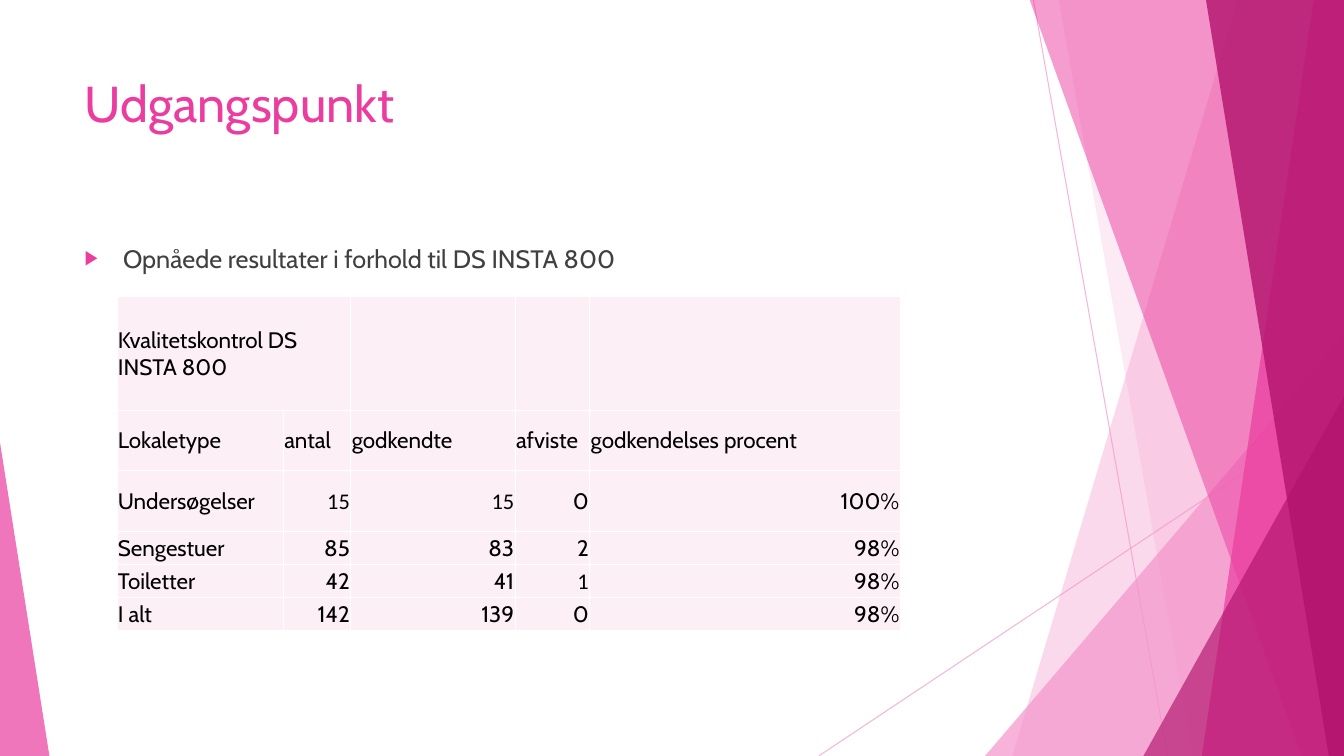
from lxml.etree import SubElement
from pptx import Presentation
from pptx.dml.color import RGBColor
from pptx.enum.shapes import MSO_CONNECTOR, MSO_SHAPE
from pptx.enum.text import MSO_ANCHOR, MSO_AUTO_SIZE, PP_ALIGN
from pptx.oxml import parse_xml
from pptx.oxml.ns import nsdecls, qn
from pptx.util import Inches, Pt

PINK = RGBColor(0xEB, 0x3D, 0x9F)
LIGHT_PINK = RGBColor(0xF4, 0x96, 0xCB)
DARK_PINK = RGBColor(0xB2, 0x13, 0x6D)
CELL_PINK = RGBColor(0xFD, 0xEF, 0xF6)
WHITE = RGBColor(0xFF, 0xFF, 0xFF)
BLACK = RGBColor(0, 0, 0)
GREY = RGBColor(0x40, 0x40, 0x40)
FONT = "Cabin"
NUMBER_FONT = "Calibri"

WIDTH, HEIGHT = 13.33, 7.5
BAND_TOP = -0.01

TITLE = "Udgangspunkt"
BULLET = "Opnåede resultater i forhold til DS INSTA 800"
ROWS = [
    ("Kvalitetskontrol DS INSTA 800", "", "", "", ""),
    ("Lokaletype", "antal", "godkendte", "afviste", "godkendelses procent"),
    ("Undersøgelser", "15", "15", "0", "100%"),
    ("Sengestuer", "85", "83", "2", "98%"),
    ("Toiletter", "42", "41", "1", "98%"),
    ("I alt", "142", "139", "0", "98%"),
]
CALIBRI_CELLS = {(2, 1), (2, 2), (4, 3)}
COLUMN_WIDTHS = [1.65, 0.67, 1.63, 0.74, 3.08]
ROW_HEIGHTS = [1.13, 0.6, 0.6, 0.33, 0.33, 0.33]

LINES = [((10.25, 0), (11.58, HEIGHT)), ((WIDTH, 4.03), (8.12, HEIGHT))]
BACK_BANDS = [(12.28, 10.04, LIGHT_PINK, 36), (10.5, 11.83, LIGHT_PINK, 20)]
FRONT_BANDS = [
    (10.21, 12.91, PINK, 50),
    (13.03, 11.92, PINK, 70),
    (11.96, 13.18, DARK_PINK, 80),
]
BACK_TRIANGLE = (9.77, 3.33, 3.56, 1, LIGHT_PINK, 72)
FRONT_TRIANGLES = [(11.34, 3.93, 1.99, 1, DARK_PINK, 66), (0, 4.39, 0.49, 0, PINK, 70)]


def set_opacity(element, percent):
    """Give the first colour inside the element an opacity in percent."""
    color = next(element.iter(qn("a:srgbClr")))
    SubElement(color, qn("a:alpha")).set("val", str(percent * 1000))


def paint(shape, color, opacity):
    """Fill a shape with a translucent colour and no outline or shadow."""
    shape.shadow.inherit = False
    shape.fill.solid()
    shape.fill.fore_color.rgb = color
    set_opacity(shape.element.spPr, opacity)
    shape.line.fill.background()


def add_line(slide, start, end):
    """Draw a thin translucent line."""
    line = slide.shapes.add_connector(
        MSO_CONNECTOR.STRAIGHT, *[Inches(value) for value in start + end]
    )
    line.line.color.rgb = LIGHT_PINK
    line.line.width = Pt(0.75)
    properties = line.element.spPr
    set_opacity(properties, 70)
    SubElement(properties, qn("a:effectLst"))


def add_band(slide, top_left, bottom_left, color, opacity):
    """Draw a band from a slanted left edge to the right side of the slide."""
    corners = [(WIDTH, BAND_TOP), (WIDTH, HEIGHT), (bottom_left, HEIGHT)]
    builder = slide.shapes.build_freeform(Inches(top_left), Inches(BAND_TOP))
    builder.add_line_segments([(Inches(x), Inches(y)) for x, y in corners])
    paint(builder.convert_to_shape(), color, opacity)


def add_triangle(slide, left, top, width, apex, color, opacity):
    """Draw a right-angled triangle standing on the bottom of the slide."""
    triangle = slide.shapes.add_shape(
        MSO_SHAPE.ISOSCELES_TRIANGLE,
        Inches(left), Inches(top), Inches(width), Inches(HEIGHT - top),
    )
    triangle.adjustments[0] = apex
    paint(triangle, color, opacity)


def add_text(paragraph, text, size, color, font=FONT):
    """Add a formatted run to a paragraph."""
    run = paragraph.add_run()
    run.text = text
    run.font.size = Pt(size)
    run.font.name = font
    run.font.color.rgb = color


def fill_placeholder(placeholder, top, height, text, size, color):
    """Place a placeholder, write its text and bring it to the front."""
    placeholder.left, placeholder.top = Inches(0.74), Inches(top)
    placeholder.width, placeholder.height = Inches(9.4), Inches(height)
    frame = placeholder.text_frame
    frame.word_wrap = True
    frame.auto_size = MSO_AUTO_SIZE.NONE
    frame.vertical_anchor = MSO_ANCHOR.TOP
    paragraph = frame.paragraphs[0]
    paragraph.alignment = PP_ALIGN.LEFT
    add_text(paragraph, text, size, color)
    placeholder.element.getparent().append(placeholder.element)
    return paragraph


def add_bullet(paragraph):
    """Give a paragraph a hanging pink triangle bullet."""
    paragraph.space_before = Pt(10)
    properties = paragraph._p.get_or_add_pPr()
    properties.set("marL", str(Inches(0.38)))
    properties.set("indent", str(-Inches(0.38)))
    color = SubElement(properties, qn("a:buClr"))
    SubElement(color, qn("a:srgbClr")).set("val", str(PINK))
    SubElement(properties, qn("a:buSzPct")).set("val", "80000")
    SubElement(properties, qn("a:buChar")).set("char", "▶")


def format_cell(cell):
    """Set the margins, fill and white borders of a cell."""
    cell.margin_left = cell.margin_top = cell.margin_right = Inches(0.01)
    cell.margin_bottom = 0
    cell.vertical_anchor = MSO_ANCHOR.MIDDLE
    cell.fill.solid()
    cell.fill.fore_color.rgb = CELL_PINK
    for position, side in enumerate(("lnL", "lnR", "lnT", "lnB")):
        border = parse_xml(
            f'<a:{side} {nsdecls("a")} w="{Pt(1)}"><a:solidFill>'
            f'<a:srgbClr val="{WHITE}"/></a:solidFill></a:{side}>'
        )
        cell._tc.get_or_add_tcPr().insert(position, border)


def add_results(slide):
    """Build the table of control results."""
    table = slide.shapes.add_table(
        len(ROWS), len(COLUMN_WIDTHS), Inches(1.16), Inches(2.94),
        Inches(sum(COLUMN_WIDTHS)), Inches(sum(ROW_HEIGHTS)),
    ).table
    table.first_row = table.horz_banding = False
    for column, width in zip(table.columns, COLUMN_WIDTHS):
        column.width = Inches(width)
    for row, height in zip(table.rows, ROW_HEIGHTS):
        row.height = Inches(height)
    for row_index, texts in enumerate(ROWS):
        for column_index, text in enumerate(texts):
            cell = table.cell(row_index, column_index)
            format_cell(cell)
            if not text:
                continue
            paragraph = cell.text_frame.paragraphs[0]
            is_number = row_index > 1 and column_index > 0
            paragraph.alignment = PP_ALIGN.RIGHT if is_number else PP_ALIGN.LEFT
            uses_calibri = (row_index, column_index) in CALIBRI_CELLS
            add_text(paragraph, text, 16, BLACK, NUMBER_FONT if uses_calibri else FONT)
    table.cell(0, 0).merge(table.cell(0, 1))


def main():
    """Build and save the slide."""
    presentation = Presentation()
    presentation.slide_width, presentation.slide_height = Inches(WIDTH), Inches(HEIGHT)
    slide = presentation.slides.add_slide(presentation.slide_layouts[1])
    for start, end in LINES:
        add_line(slide, start, end)
    for band in BACK_BANDS:
        add_band(slide, *band)
    add_triangle(slide, *BACK_TRIANGLE)
    for band in FRONT_BANDS:
        add_band(slide, *band)
    for triangle in FRONT_TRIANGLES:
        add_triangle(slide, *triangle)
    fill_placeholder(slide.shapes.title, 0.67, 1.44, TITLE, 36, PINK)
    add_bullet(fill_placeholder(slide.placeholders[1], 2.36, 4.24, BULLET, 18, GREY))
    add_results(slide)
    presentation.save("out.pptx")


if __name__ == "__main__":
    main()
